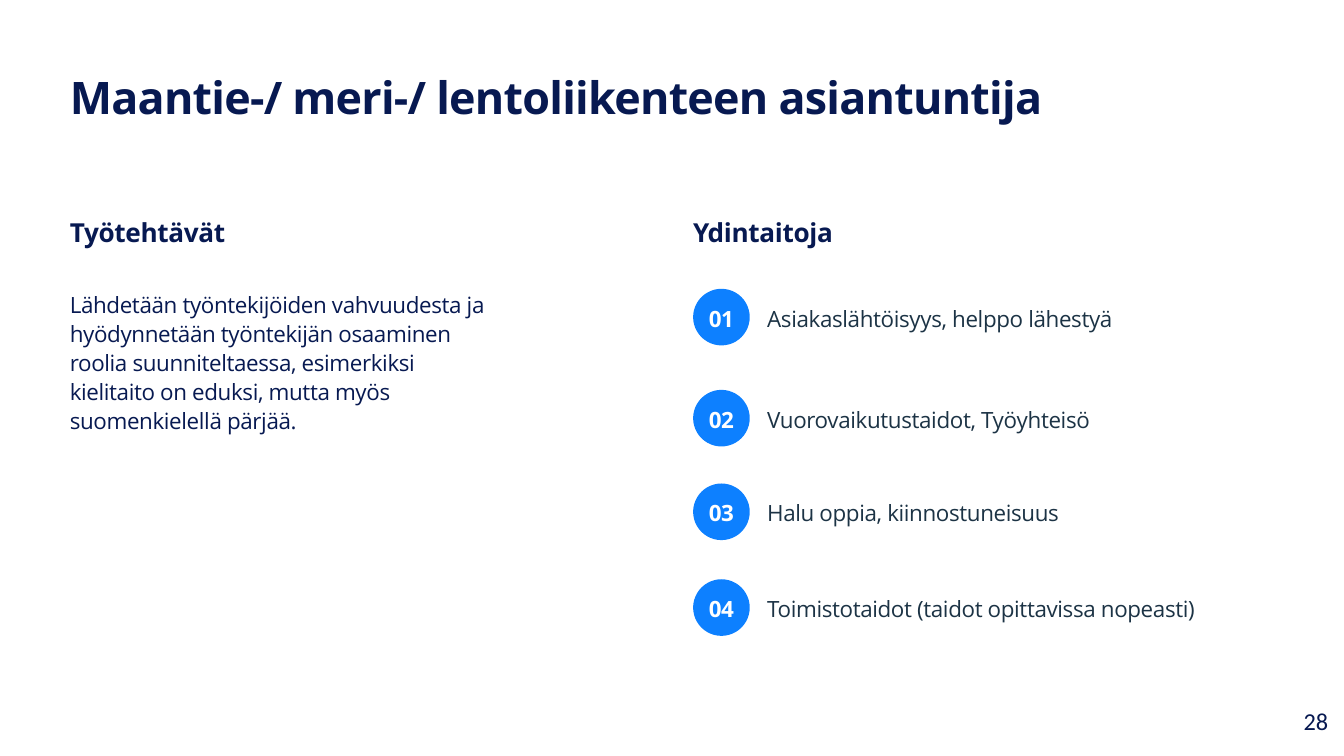
import pptx
import pptx.dml.color
import pptx.enum.shapes
import pptx.enum.text
import pptx.util

Cm, Pt = pptx.util.Cm, pptx.util.Pt
RGB = pptx.dml.color.RGBColor
Anchor = pptx.enum.text.MSO_ANCHOR
Align = pptx.enum.text.PP_ALIGN

NAVY = RGB(0x07, 0x19, 0x51)
SLATE = RGB(0x1C, 0x33, 0x45)
BLUE = RGB(0x0D, 0x80, 0xFF)
WHITE = RGB(0xFF, 0xFF, 0xFF)


class Page:
    font = "Open Sans"

    def __init__(self, deck):
        self.slide = deck.slides.add_slide(deck.slide_layouts[5])
        fill = self.slide.background.fill
        fill.solid()
        fill.fore_color.rgb = WHITE

    def label(self, shape, words, size=12, color=NAVY, bold=False, line=15.6,
              track=-20, font=None, anchor=Anchor.TOP, align=Align.LEFT):
        frame = shape.text_frame
        frame.word_wrap = True
        frame.auto_size = pptx.enum.text.MSO_AUTO_SIZE.NONE
        frame.vertical_anchor = anchor
        frame.margin_left = frame.margin_right = 0
        frame.margin_top = frame.margin_bottom = 0
        para = frame.paragraphs[0]
        para.alignment = align
        if line:
            para.line_spacing = Pt(line)
        run = para.add_run()
        run.text = words
        run.font.name = font or self.font
        run.font.size = Pt(size)
        run.font.bold = bold
        run.font.color.rgb = color
        if track:
            run.font._element.set("spc", str(track))

    def title(self, words, x, y, w, h):
        shape = self.slide.shapes.title
        shape.left, shape.top, shape.width, shape.height = map(Cm, (x, y, w, h))
        self.label(shape, words, 24, bold=True, line=28.8, track=-40)

    def text(self, words, x, y, w, h, **style):
        box = self.slide.shapes.add_textbox(Cm(x), Cm(y), Cm(w), Cm(h))
        self.label(box, words, **style)

    def head(self, words, x):
        self.text(words, x, 4.06, 10.97, 0.61, size=14, bold=True, line=17.6)

    def badge(self, words, x, y, size):
        oval = pptx.enum.shapes.MSO_SHAPE.OVAL
        dot = self.slide.shapes.add_shape(oval, Cm(x), Cm(y), Cm(size), Cm(size))
        dot.shadow.inherit = False
        dot.fill.solid()
        dot.fill.fore_color.rgb = BLUE
        dot.line.fill.background()
        self.label(dot, words, color=WHITE, bold=True,
                   anchor=Anchor.MIDDLE, align=Align.CENTER)


def main():
    deck = pptx.Presentation()
    deck.slide_width, deck.slide_height = Cm(25.4), Cm(14.29)
    page = Page(deck)
    left, right = 1.32, 13.1

    page.title("Maantie-/ meri-/ lentoliikenteen asiantuntija",
               left, 1.32, 22.76, 1.02)

    # Tasks
    page.head("Työtehtävät", left)
    page.text("Lähdetään työntekijöiden vahvuudesta ja hyödynnetään "
              "työntekijän osaaminen roolia suunniteltaessa, esimerkiksi "
              "kielitaito on eduksi, mutta myös suomenkielellä pärjää.",
              left, 5.46, 8.18, 2.74)

    # Core skills, each centred on its numbered circle
    page.head("Ydintaitoja", right)
    skills = [
        (5.46, "Asiakaslähtöisyys, helppo lähestyä"),
        (7.37, "Vuorovaikutustaidot, Työyhteisö"),
        (9.14, "Halu oppia, kiinnostuneisuus"),
        (10.95, "Toimistotaidot (taidot opittavissa nopeasti)"),
    ]
    size, high = 1.07, 0.56
    for num, (y, skill) in enumerate(skills, 1):
        page.badge(f"{num:02}", right, y, size)
        page.text(skill, 14.5, y + (size - high) / 2, 9.58, high,
                  color=SLATE, anchor=Anchor.MIDDLE)

    # Page number
    page.text("28", 24.64, 13.21, 0.76, 0.84, size=13, font="Calibri",
              line=None, track=0, anchor=Anchor.MIDDLE)

    deck.save("out.pptx")


if __name__ == "__main__":
    main()
